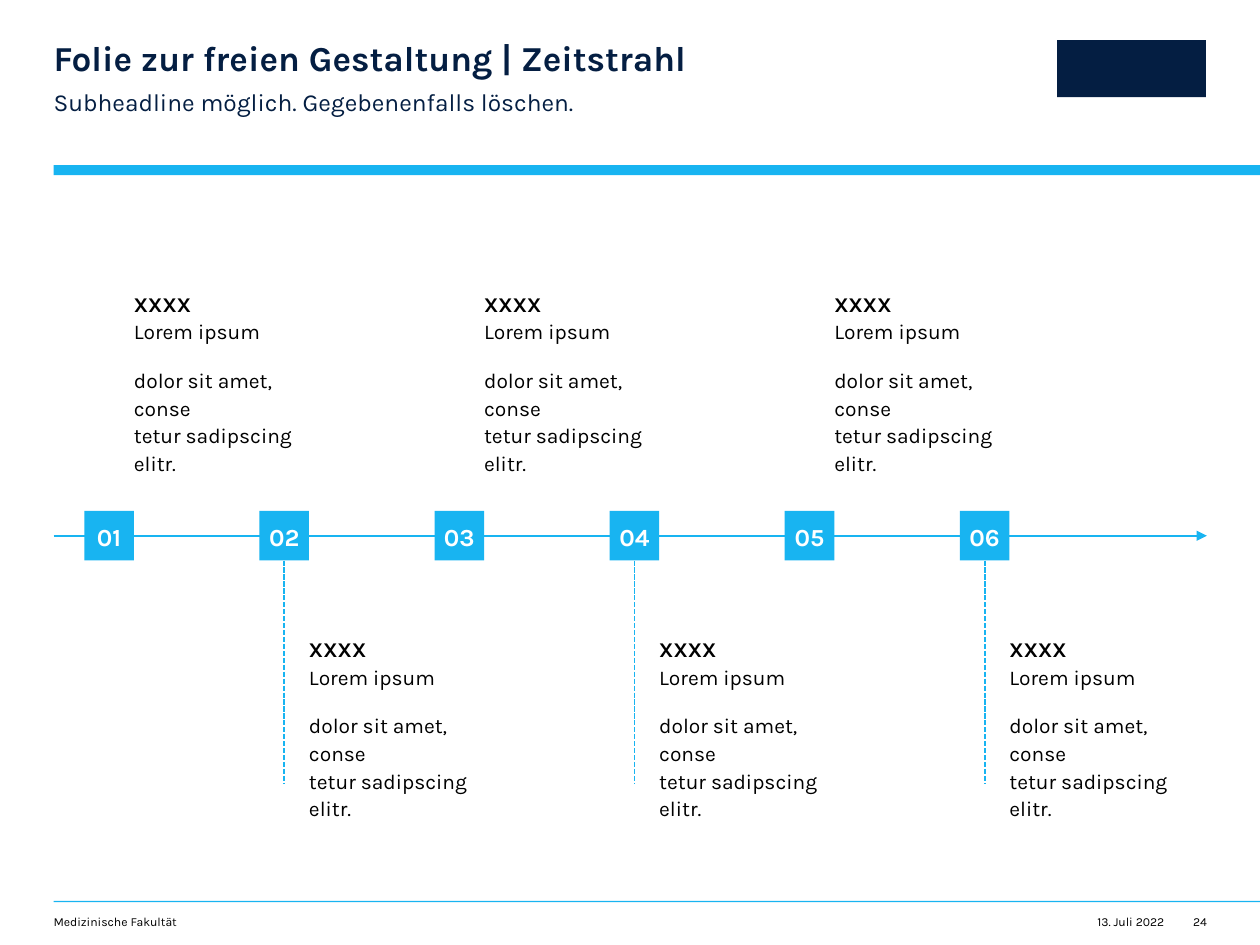
import copy

import pptx
import pptx.dml.color
import pptx.enum.dml
import pptx.enum.shapes
import pptx.enum.text
import pptx.oxml
import pptx.oxml.ns
import pptx.util
from pptx.util import Cm, Pt

COLORS = {"blue": "18B4F1", "navy": "041E42", "black": "000000", "white": "FFFFFF"}
FONT = "Karla"
LEFT, RIGHT = 1.08, 24.33
SIDE, STEP, FIRST = 1.0, 3.53, 1.7
AXIS = 10.8
ALIGN = pptx.enum.text.PP_ALIGN


def rgb(name):
    return pptx.dml.color.RGBColor.from_string(COLORS[name])


def style(para, size, color, bold=False, align=ALIGN.LEFT, line=1.0, after=0):
    para.alignment = align
    para.line_spacing = line
    para.space_after = Pt(after)
    for run in para.runs:
        run.font.name = FONT
        run.font.size = Pt(size)
        run.font.bold = bold
        run.font.color.rgb = rgb(color)
    # A line break needs the run format too, or it sets its line's height.
    for brk in para._p.findall(pptx.oxml.ns.qn("a:br")):
        brk.append(copy.deepcopy(para.runs[0]._r.rPr))


def clear(frame, wrap):
    frame.margin_left = frame.margin_right = 0
    frame.margin_top = frame.margin_bottom = 0
    frame.word_wrap = wrap


def add_text(slide, box, text, size, color, wrap=True, **look):
    frame = slide.shapes.add_textbox(*map(Cm, box)).text_frame
    clear(frame, wrap)
    frame.text = text
    for para in frame.paragraphs:
        style(para, size, color, **look)
    return frame


def add_rect(slide, box, color):
    kind = pptx.enum.shapes.MSO_SHAPE.RECTANGLE
    rect = slide.shapes.add_shape(kind, *map(Cm, box))
    rect.shadow.inherit = False
    rect.fill.solid()
    rect.fill.fore_color.rgb = rgb(color)
    rect.line.fill.background()
    return rect


def add_line(slide, start, end):
    kind = pptx.enum.shapes.MSO_CONNECTOR.STRAIGHT
    line = slide.shapes.add_connector(kind, *map(Cm, start + end))
    line.line.color.rgb = rgb("blue")
    line.line.width = Pt(1)
    pptx.oxml.ns.qn("a:effectLst")
    line._element.spPr.append(
        pptx.oxml.parse_xml("<a:effectLst %s/>" % pptx.oxml.ns.nsdecls("a")))
    return line


def add_axis(slide):
    axis = add_line(slide, (LEFT, AXIS), (RIGHT, AXIS))
    head = pptx.oxml.parse_xml(
        '<a:tailEnd %s type="triangle"/>' % pptx.oxml.ns.nsdecls("a"))
    axis.line._get_or_add_ln().append(head)


def add_step(slide, index):
    """Numbered square with its text above (odd) or below (even) the axis."""
    left = FIRST + index * STEP
    below = index % 2 == 1
    square = add_rect(slide, (left, AXIS - SIDE / 2, SIDE, SIDE), "blue")
    frame = square.text_frame
    clear(frame, True)
    frame.vertical_anchor = pptx.enum.text.MSO_ANCHOR.MIDDLE
    frame.text = f"{index + 1:02d}"
    style(frame.paragraphs[0], 14, "white", bold=True, align=ALIGN.CENTER,
          line=1.1, after=12)

    top = 12.78 if below else 5.82
    note = add_text(
        slide, (left + SIDE, top, 3.94, 2.64),
        "XXXX\vLorem ipsum\ndolor sit amet, conse\vtetur sadipscing elitr.",
        12, "black", wrap=False, line=1.1, after=12)
    note.paragraphs[0].runs[0].font.bold = True

    if below:
        mid = left + SIDE / 2
        stem = add_line(slide, (mid, AXIS + SIDE / 2), (mid, 15.8))
        stem.begin_connect(square, 2)
        stem.line.dash_style = pptx.enum.dml.MSO_LINE.SQUARE_DOT


def add_header(slide):
    add_rect(slide, (LEFT, 3.33, 25.4 - LEFT, 0.2), "blue")
    add_rect(slide, (21.31, 0.81, 3.0, 1.15), "navy")
    add_text(slide, (LEFT, 0.84, 14.25, 0.76),
             "Folie zur freien Gestaltung | Zeitstrahl", 20, "navy",
             bold=True, line=0.9)
    add_text(slide, (LEFT, 1.7, 14.25, 0.62),
             "Subheadline möglich. Gegebenenfalls löschen.", 14, "navy",
             line=1.1, after=8)


def add_footer(slide):
    add_rect(slide, (LEFT, 18.16, 25.4 - LEFT, 0.03), "blue")
    top, high = 18.44, 0.3
    add_text(slide, (LEFT, top, 11.4, high), "Medizinische Fakultät", 7, "black")
    for left, wide, text in ((22.02, 1.45, "13. Juli 2022"), (24.05, 0.28, "24")):
        add_text(slide, (left, top, wide, high), text, 7, "black",
                 wrap=False, align=ALIGN.RIGHT)


def main():
    deck = pptx.Presentation()
    deck.slide_width, deck.slide_height = Cm(25.4), Cm(19.05)
    slide = deck.slides.add_slide(deck.slide_layouts[6])
    add_header(slide)
    add_footer(slide)
    add_axis(slide)
    for index in range(6):
        add_step(slide, index)
    deck.save("out.pptx")


if __name__ == "__main__":
    main()
